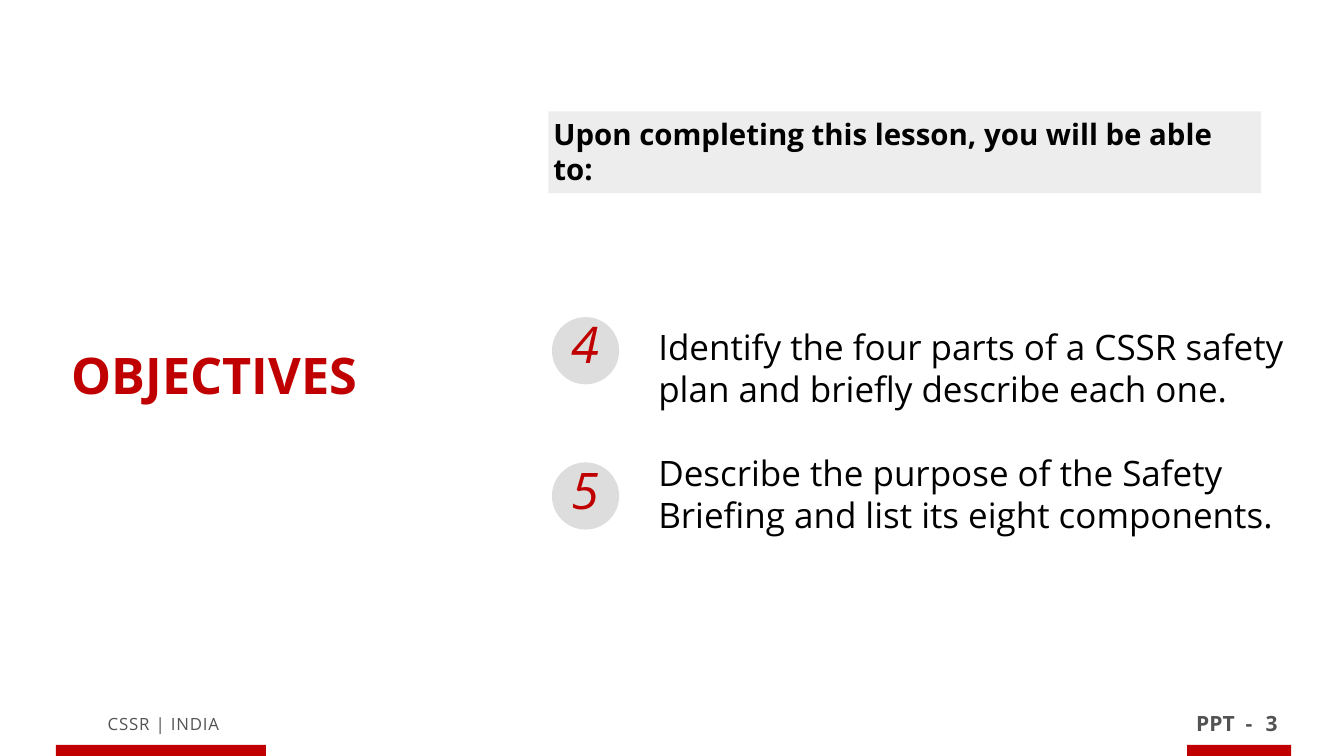
from dataclasses import dataclass

from pptx import Presentation
from pptx.dml.color import RGBColor
from pptx.enum import shapes, text
from pptx.util import Pt


@dataclass(frozen=True)
class Theme:
    face: str = "Open Sans"
    red: str = "C00000"
    black: str = "000000"
    gray: str = "535353"
    pale: str = "EDEDED"
    disc: str = "DDDDDD"
    title: int = 72
    body: int = 50
    lead: int = 42
    page: int = 30
    foot: int = 24


THEME = Theme()
LEFT, MID = text.PP_ALIGN.LEFT, text.PP_ALIGN.CENTER


def set_text(shape, lines, size, color, bold=False, italic=False,
             align=LEFT, wrap=True, inset=6.5, gap=0):
    """Fill a shape with paragraphs in one style."""
    frame = shape.text_frame
    frame.text = "\n".join(lines)
    frame.word_wrap = wrap
    frame.auto_size = text.MSO_AUTO_SIZE.NONE
    frame.vertical_anchor = text.MSO_ANCHOR.TOP
    frame.margin_left = frame.margin_right = Pt(inset)
    frame.margin_top = frame.margin_bottom = Pt(inset)
    for i, para in enumerate(frame.paragraphs):
        para.alignment = align
        para.line_spacing = 1.0
        para.space_before = Pt(gap if i else 0)
        for run in para.runs:
            font = run.font
            font.name, font.size = THEME.face, Pt(size)
            font.bold, font.italic = bold, italic
            font.color.rgb = RGBColor.from_string(color)


def add_label(owner, box, lines, size, color, **style):
    label = owner.add_textbox(*map(Pt, box))
    set_text(label, lines, size, color, **style)
    return label


def add_fill(owner, kind, box, color):
    shape = owner.add_shape(kind, *map(Pt, box))
    shape.shadow.inherit = False
    shape.fill.solid()
    shape.fill.fore_color.rgb = RGBColor.from_string(color)
    shape.line.fill.background()
    return shape


def add_badge(slide, left, top, number):
    """Group a disc with its number."""
    group = slide.shapes.add_group_shape().shapes
    add_fill(group, shapes.MSO_SHAPE.OVAL, (left, top, 96, 96), THEME.disc)
    add_label(group, (left + 21, top - 11.5, 65, 132.5), [str(number)],
              THEME.title, THEME.red, italic=True)


def add_footer(slide):
    items = slide.shapes
    label = add_label(items, (50.5, 1013, 366, 42), ["CSSR | INDIA"],
                      THEME.foot, THEME.gray, align=MID)
    for run in label.text_frame.paragraphs[0].runs:
        run.font._element.set("spc", "120")  # letter spacing
    for left, width, words in ((1702.5, 93, "PPT  -"), (1801.5, 30, "3")):
        add_label(items, (left, 1008.5, width, 50), [words], THEME.page,
                  THEME.gray, bold=True, align=MID, wrap=False)
    for left, width in ((80, 300), (1696, 148.5)):
        add_fill(items, shapes.MSO_SHAPE.RECTANGLE,
                 (left, 1064, width, 16), THEME.red)


def main():
    deck = Presentation()
    deck.slide_width, deck.slide_height = Pt(1920), Pt(1080)
    slide = deck.slides.add_slide(deck.slide_layouts[5])
    items = slide.shapes

    # Title
    title = items.title
    title.left, title.top, title.width, title.height = map(
        Pt, (96, 484.5, 450, 110))
    set_text(title, ["OBJECTIVES"], THEME.title, THEME.red, bold=True)

    # Lead-in band
    band = add_fill(items, shapes.MSO_SHAPE.RECTANGLE,
                    (783.5, 159, 1018, 117), THEME.pale)
    set_text(band, ["Upon completing this lesson, you will be able to:"],
             THEME.lead, THEME.black, bold=True, inset=7)

    # Objectives and their numbers
    goals = [
        "Identify the four parts of a CSSR safety plan "
        "and briefly describe each one.",
        "Describe the purpose of the Safety Briefing "
        "and list its eight components.",
    ]
    add_label(items, (934, 458.5, 914, 352), goals,
              THEME.body, THEME.black, gap=60)
    for i in range(len(goals)):
        add_badge(slide, 788.5, 453 + 207.5 * i, 4 + i)

    # Footer
    add_footer(slide)
    deck.save("out.pptx")


if __name__ == "__main__":
    main()
